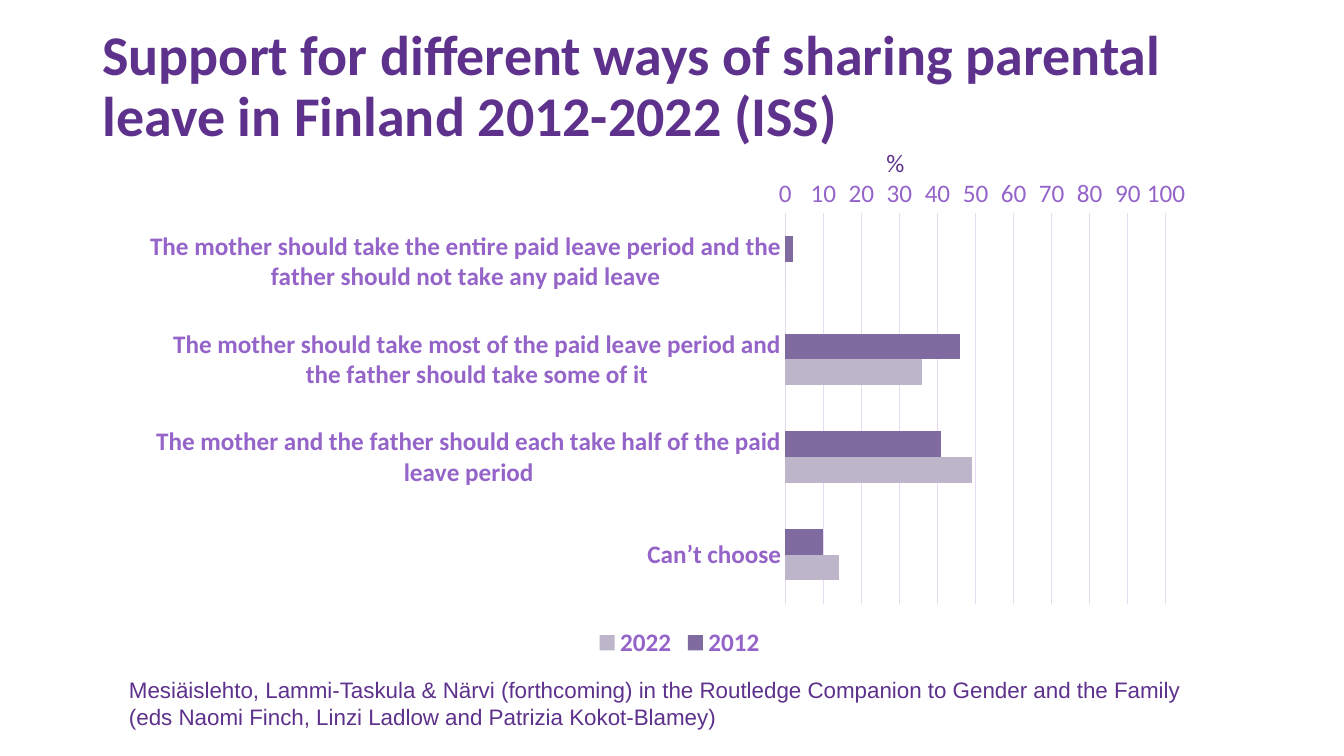
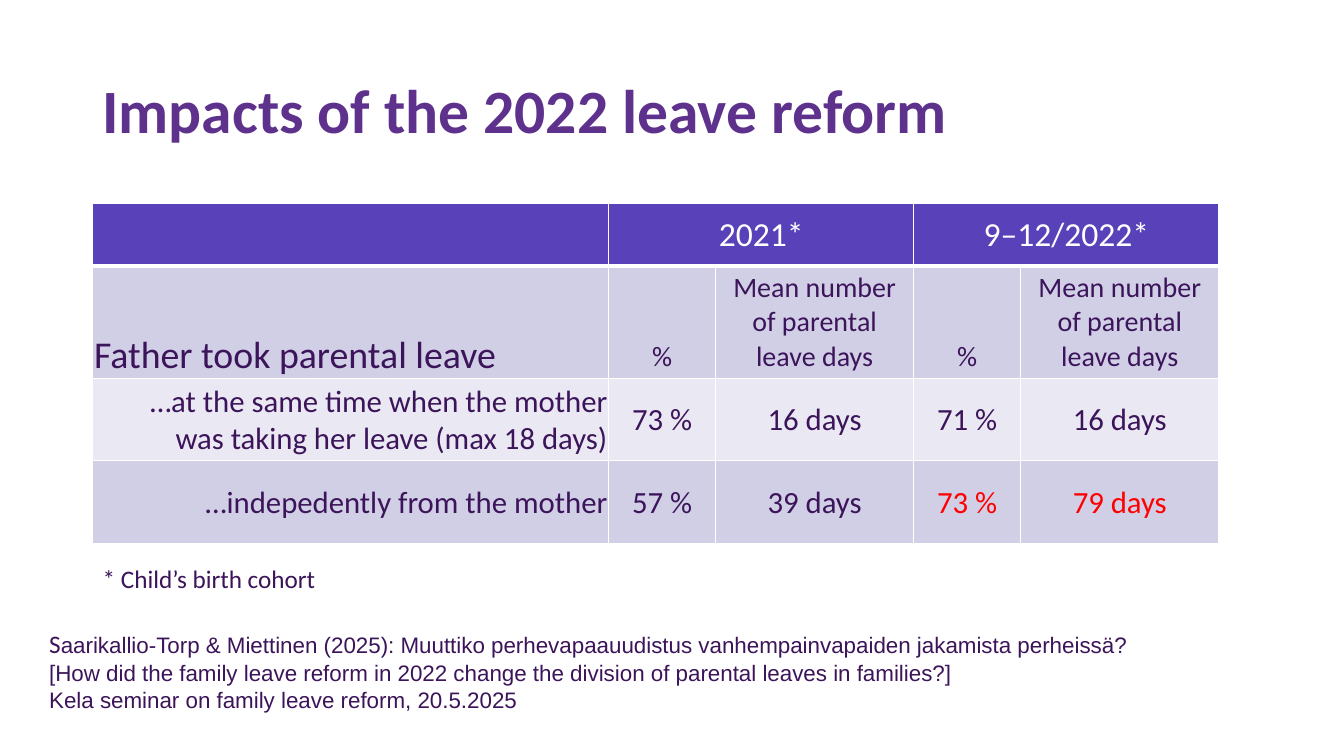
from lxml.etree import SubElement
from pptx import Presentation
from pptx.chart.data import CategoryChartData
from pptx.dml.color import RGBColor
from pptx.enum.chart import XL_CHART_TYPE, XL_LEGEND_POSITION, XL_TICK_MARK
from pptx.enum.text import MSO_ANCHOR, MSO_AUTO_SIZE, PP_ALIGN
from pptx.oxml import parse_xml
from pptx.oxml.ns import nsdecls, qn
from pptx.util import Cm, Pt

PURPLE = RGBColor(0x5D, 0x31, 0x8C)
LILAC = RGBColor(0x95, 0x64, 0xC9)
GRID = RGBColor(0xE7, 0xDB, 0xF3)
DARK = RGBColor(0x3C, 0x14, 0x5A)
HEADER = RGBColor(0x58, 0x41, 0xB9)
BAND = RGBColor(0xD1, 0xCF, 0xE6)
PALE = RGBColor(0xEA, 0xE9, 0xF3)
RED = RGBColor(0xFF, 0x00, 0x00)
WHITE = RGBColor(0xFF, 0xFF, 0xFF)
BAR_2012 = RGBColor(0x7F, 0x6B, 0x9F)
BAR_2022 = RGBColor(0xBD, 0xB6, 0xCB)

HEADING_FONT = "Calibri"
SOURCE_FONT = "Arial"

SUPPORT = [
    ("The mother should take the entire paid leave period and the father should not take any paid leave", 2, 0),
    ("The mother should take most of the paid leave period and the father should take some of it", 46, 36),
    ("The mother and the father should each take half of the paid leave period", 41, 49),
    ("Can’t choose", 10, 14),
]
MEAN_DAYS = "Mean number of parental leave days"
REFORM = [
    ["", "2021*", "", "9–12/2022*", ""],
    ["Father took parental leave", "%", MEAN_DAYS, "%", MEAN_DAYS],
    ["…at the same time when the mother was taking her leave (max 18 days)",
     "73 %", "16 days", "71 %", "16 days"],
    ["…indepedently from the mother", "57 %", "39 days", "73 %", "79 days"],
]


def set_font(font, size, color, name=HEADING_FONT, bold=False):
    font.name = name
    font.size = Pt(size)
    font.bold = bold
    font.color.rgb = color


def add_slide(prs, title, top, size):
    s = prs.slides.add_slide(prs.slide_layouts[5])
    sp = s.shapes.title
    sp.left, sp.top, sp.width, sp.height = Cm(2.33), top, Cm(29.21), Cm(3.68)
    tf = sp.text_frame
    tf.text = title
    tf.word_wrap = True
    tf.auto_size = MSO_AUTO_SIZE.NONE
    tf.vertical_anchor = MSO_ANCHOR.MIDDLE
    p = tf.paragraphs[0]
    p.alignment = PP_ALIGN.LEFT
    p.line_spacing = 0.9
    set_font(p.font, size, PURPLE, bold=True)
    return s


def add_text(s, box, lines, size, color, name=HEADING_FONT, wrap=True):
    tf = s.shapes.add_textbox(*box).text_frame
    tf.word_wrap = wrap
    for i, line in enumerate(lines):
        p = tf.add_paragraph() if i else tf.paragraphs[0]
        for text in line:
            p.add_run().text = text
        set_font(p.font, size, color, name)
    return tf


def set_plot_area(chart, x, y, w, h):
    plot_area = chart._chartSpace.chart.plotArea
    for old in plot_area.findall(qn("c:layout")):
        plot_area.remove(old)
    layout = parse_xml(f"<c:layout {nsdecls('c')}><c:manualLayout/></c:layout>")
    settings = [("layoutTarget", "inner"), ("xMode", "edge"), ("yMode", "edge"),
                ("x", x), ("y", y), ("w", w), ("h", h)]
    for tag, val in settings:
        SubElement(layout[0], qn(f"c:{tag}")).set("val", str(val))
    plot_area.insert(0, layout)


def add_support_chart(s, left, top, width, height):
    data = CategoryChartData(number_format="0")
    data.categories = [row[0] for row in SUPPORT]
    data.add_series("2012", [row[1] for row in SUPPORT])
    data.add_series("2022", [row[2] for row in SUPPORT])
    chart = s.shapes.add_chart(XL_CHART_TYPE.BAR_CLUSTERED, left, top, width, height, data).chart
    set_font(chart.font, 18, PURPLE)
    chart.has_title = False
    set_plot_area(chart, 0.6, 0.09, 0.36, 0.79)

    plot = chart.plots[0]
    plot.gap_width = 182
    plot.vary_by_categories = False
    for series, color in zip(plot.series, (BAR_2012, BAR_2022)):
        series.format.fill.solid()
        series.format.fill.fore_color.rgb = color

    cat, val = chart.category_axis, chart.value_axis
    for axis in (cat, val):
        axis.major_tick_mark = axis.minor_tick_mark = XL_TICK_MARK.NONE
        set_font(axis.tick_labels.font, 18, LILAC, bold=axis is cat)
    cat.reverse_order = True
    val.minimum_scale, val.maximum_scale, val.major_unit = 0, 100, 10
    val.tick_labels.number_format = "0"
    val.tick_labels.number_format_is_linked = False
    val.format.line.fill.background()
    val.has_major_gridlines = True
    for line in (cat.format.line, val.major_gridlines.format.line):
        line.color.rgb = GRID
        line.width = Pt(0.75)

    chart.has_legend = True
    chart.legend.position = XL_LEGEND_POSITION.BOTTOM
    chart.legend.include_in_layout = False
    set_font(chart.legend.font, 18, LILAC, bold=True)

    add_text(s, (left + Cm(18.31), top - Cm(0.66), Cm(0.74), Cm(1.02)), [["%"]], 18, PURPLE)


def set_borders(cell, bottom):
    tc_pr = cell._tc.get_or_add_tcPr()
    for i, (side, width) in enumerate((("L", 1), ("R", 1), ("T", 1), ("B", bottom))):
        tc_pr.insert(i, parse_xml(
            f'<a:ln{side} {nsdecls("a")} w="{Pt(width)}"><a:solidFill>'
            f'<a:srgbClr val="{WHITE}"/></a:solidFill></a:ln{side}>'))


def format_cell(cell, row, col):
    cell.fill.solid()
    cell.fill.fore_color.rgb = (HEADER, BAND, PALE, BAND)[row]
    cell.vertical_anchor = MSO_ANCHOR.BOTTOM if row == 1 else MSO_ANCHOR.MIDDLE
    set_borders(cell, 1 if row else 3)
    if row > 1 or (row == 1 and col == 0):
        cell.margin_left = cell.margin_right = cell.margin_top = Cm(0.03)
        cell.margin_bottom = 0
    p = cell.text_frame.paragraphs[0]
    size, color = (24, 20, 22, 22)[row], DARK if row else WHITE
    p.alignment = PP_ALIGN.CENTER
    if col == 0 and row == 1:
        p.alignment, size = PP_ALIGN.LEFT, 27
    elif col == 0 and row > 1:
        p.alignment, p.level = PP_ALIGN.RIGHT, 1
    elif row == 3 and col > 2:
        color = RED
    set_font(p.font, size, color)


def add_reform_table(s, left, top):
    widths = [Cm(w) for w in (13, 2.69, 5, 2.69, 5)]
    heights = [Cm(h) for h in (1.57, 2.84, 2.06, 2.1)]
    table = s.shapes.add_table(len(heights), len(widths), left, top, sum(widths), sum(heights)).table
    for col, width in zip(table.columns, widths):
        col.width = width
    for i, height in enumerate(heights):
        table.rows[i].height = height
        for j, text in enumerate(REFORM[i]):
            cell = table.cell(i, j)
            cell.text = text
            format_cell(cell, i, j)
    for j in (1, 3):
        table.cell(0, j).merge(table.cell(0, j + 1))


def build_support_slide(prs):
    s = add_slide(prs, "Support for different ways of sharing parental leave in Finland 2012-2022 (ISS)",
                  Cm(0.38), 40)
    add_support_chart(s, Cm(3.78), Cm(4.24), Cm(26.67), Cm(12.47))
    add_text(s, (Cm(3), Cm(16.92), Cm(28.24), Cm(1.63)),
             [["Mesiäislehto, Lammi-Taskula & Närvi (forthcoming) in the Routledge Companion to Gender "
               "and the Family (eds Naomi Finch, Linzi Ladlow and Patrizia Kokot-Blamey)"]],
             16, PURPLE, SOURCE_FONT)


def build_reform_slide(prs):
    s = add_slide(prs, "Impacts of the 2022 leave reform", Cm(1.02), 44)
    add_reform_table(s, Cm(2.34), Cm(5.13))
    add_text(s, (Cm(2.34), Cm(14.07), Cm(6.12), Cm(1.02)), [["* Child’s birth cohort"]],
             18, DARK, wrap=False)
    tf = add_text(s, (Cm(0.99), Cm(15.72), Cm(32.87), Cm(2.39)), [
        ["S", "aarikallio-Torp & Miettinen (2025): Muuttiko perhevapaauudistus vanhempainvapaiden "
              "jakamista perheissä?"],
        ["[How did the family leave reform in 2022 change the division of parental leaves in families?]"],
        ["Kela seminar on family leave reform, 20.5.2025"],
    ], 16, DARK, SOURCE_FONT)
    set_font(tf.paragraphs[0].runs[0].font, 18, DARK)


def main():
    prs = Presentation()
    prs.slide_width, prs.slide_height = Cm(33.87), Cm(19.05)
    build_support_slide(prs)
    build_reform_slide(prs)
    prs.save("out.pptx")


if __name__ == "__main__":
    main()
